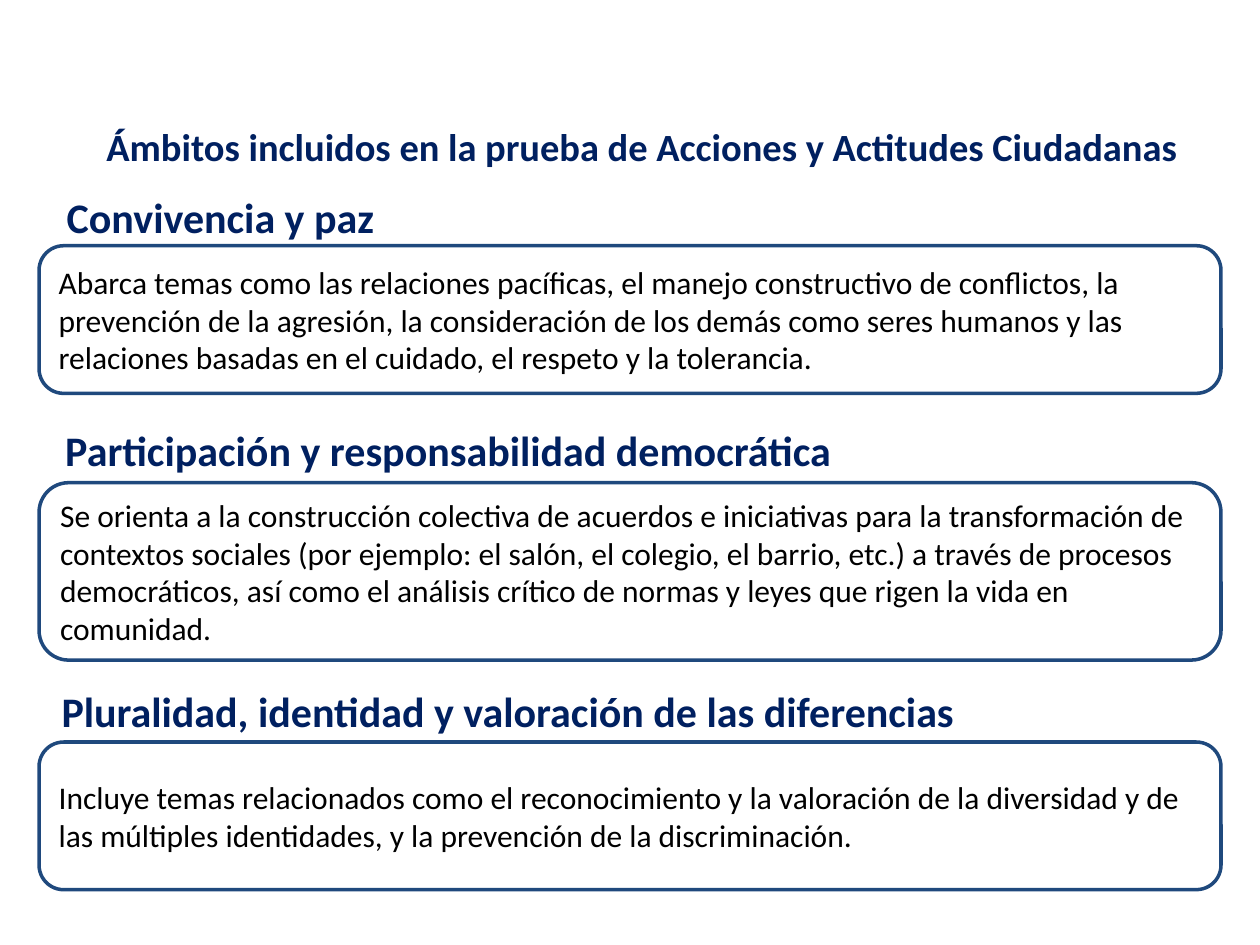
import pptx
import pptx.dml.color
import pptx.enum.shapes
import pptx.enum.text
import pptx.util

Pt = pptx.util.Pt
ALIGN = pptx.enum.text.PP_ALIGN
ANCHOR = pptx.enum.text.MSO_ANCHOR
COLORS = {"heading": "002060", "border": "1F497D", "body": "000000"}

BOX_LEFT, BOX_WIDTH = 22.3, 675.4
HEADING_HEIGHT = 36
AREAS = [
    {
        "heading": "Convivencia y paz",
        "heading_box": (8.7, 105.8, 270),
        "description": "Abarca temas como las relaciones pacíficas, el manejo constructivo de "
                       "conflictos, la prevención de la agresión, la consideración de los demás "
                       "como seres humanos y las relaciones basadas en el cuidado, el respeto y "
                       "la tolerancia.",
        "top": 140.4,
        "height": 84.4,
    },
    {
        "heading": "Participación y responsabilidad democrática",
        "heading_box": (7.9, 239, 579.6),
        "description": "Se orienta a la construcción colectiva de acuerdos e iniciativas para la "
                       "transformación de contextos sociales (por ejemplo: el salón, el colegio, "
                       "el barrio, etc.) a través de procesos democráticos, así como el análisis "
                       "crítico de normas y leyes que rigen la vida en comunidad.",
        "top": 275.8,
        "height": 101.4,
    },
    {
        "heading": "Pluralidad, identidad y valoración de las diferencias",
        "heading_box": (5.8, 388.1, 573.8),
        "description": "Incluye temas relacionados como el reconocimiento y la valoración de la "
                       "diversidad y de las múltiples identidades, y la prevención de la "
                       "discriminación.",
        "top": 424,
        "height": 84.4,
    },
]


def rgb(name):
    """Return the palette colour with the given name."""
    return pptx.dml.color.RGBColor.from_string(COLORS[name])


def write(shape, text, size, color, bold=False, align=ALIGN.LEFT, anchor=ANCHOR.TOP):
    """Fill a shape with one formatted paragraph."""
    frame = shape.text_frame
    frame.word_wrap = True
    frame.vertical_anchor = anchor
    frame.text = text
    paragraph = frame.paragraphs[0]
    paragraph.alignment = align
    font = paragraph.runs[0].font
    font.name, font.size, font.bold = "Calibri", Pt(size), bold
    font.color.rgb = rgb(color)


def add_title(slide, left, top, width, height):
    """Place the centred slide title."""
    title = slide.shapes.add_textbox(Pt(left), Pt(top), Pt(width), Pt(height))
    write(title, "Ámbitos incluidos en la prueba de Acciones y Actitudes Ciudadanas",
          22, "heading", bold=True, align=ALIGN.CENTER)


def add_area(slide, area, left, width):
    """Place one area's heading and its outlined description."""
    indent, heading_top, heading_width = area["heading_box"]
    heading = slide.shapes.add_textbox(
        Pt(left + indent), Pt(heading_top), Pt(heading_width), Pt(HEADING_HEIGHT))
    write(heading, area["heading"], 24, "heading", bold=True)

    description = slide.shapes.add_shape(
        pptx.enum.shapes.MSO_SHAPE.ROUNDED_RECTANGLE,
        Pt(left), Pt(area["top"]), Pt(width), Pt(area["height"]))
    description.shadow.inherit = False
    description.fill.background()
    description.line.color.rgb = rgb("border")
    description.line.width = Pt(2)
    write(description, area["description"], 18, "body", anchor=ANCHOR.MIDDLE)


def main():
    """Build and save the slide."""
    presentation = pptx.Presentation()
    presentation.slide_width, presentation.slide_height = Pt(720), Pt(540)
    slide = presentation.slides.add_slide(presentation.slide_layouts[6])
    for area in AREAS:
        add_area(slide, area, BOX_LEFT, BOX_WIDTH)
    add_title(slide, BOX_LEFT, 67, 689, 35.3)
    presentation.save("out.pptx")


if __name__ == "__main__":
    main()
